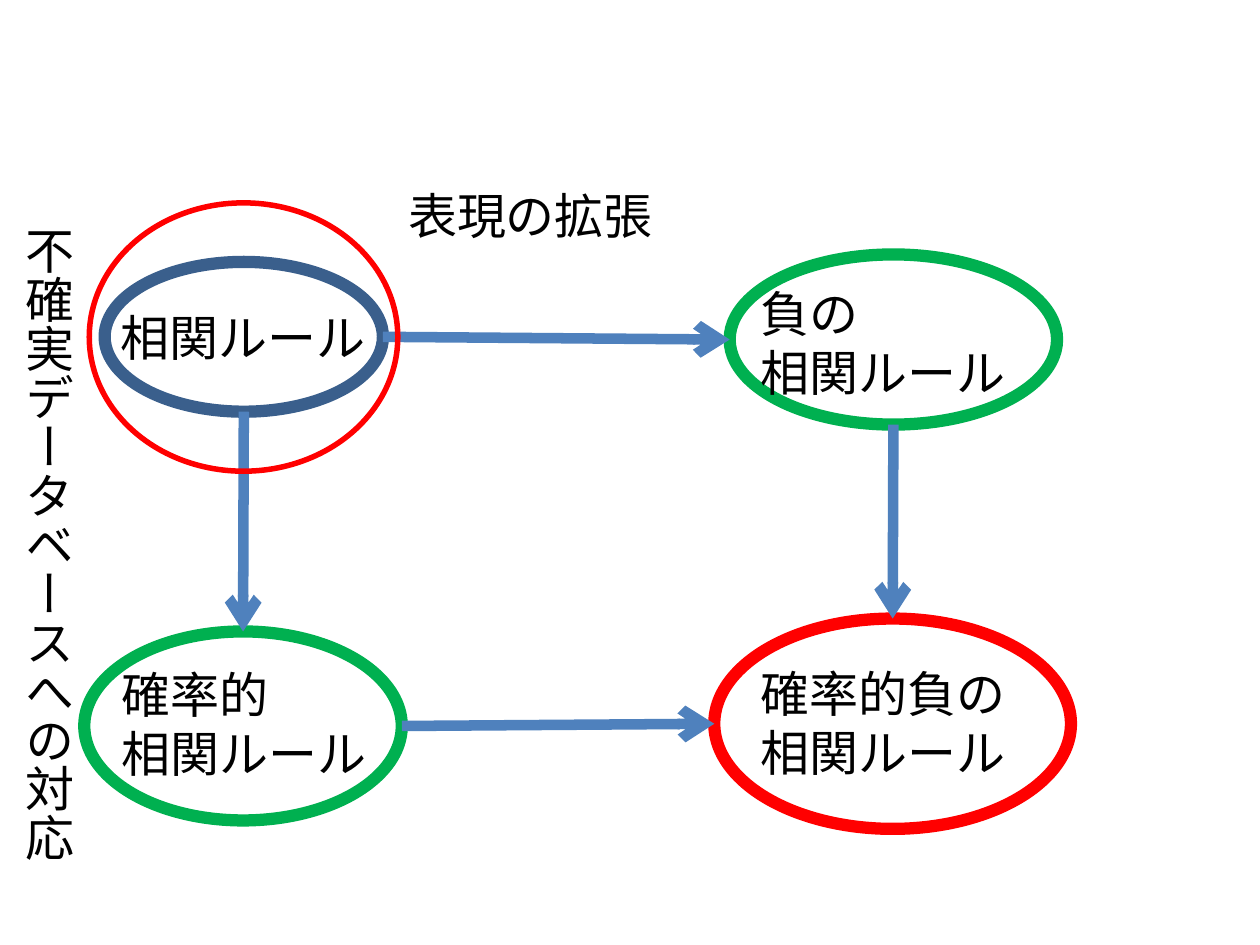
"""Build a slide that maps how correlation rules extend to negative and probabilistic ones."""
from lxml import etree
from pptx import Presentation
from pptx.dml.color import RGBColor
from pptx.enum import shapes, text
from pptx.oxml.ns import qn
from pptx.util import Cm, Pt

BLACK = RGBColor(0x00, 0x00, 0x00)
WHITE = RGBColor(0xFF, 0xFF, 0xFF)
NAVY = RGBColor(0x3A, 0x5F, 0x8C)
BLUE = RGBColor(0x4F, 0x81, 0xBD)
GREEN = RGBColor(0x00, 0xB0, 0x50)
RED = RGBColor(0xFF, 0x00, 0x00)
LEFT, CENTER = text.PP_ALIGN.LEFT, text.PP_ALIGN.CENTER

deck = Presentation()
deck.slide_width, deck.slide_height = Cm(25.4), Cm(19.05)
page = deck.slides.add_slide(deck.slide_layouts[6])


def add_ellipse(place, color, width):
    ellipse = page.shapes.add_shape(shapes.MSO_SHAPE.OVAL, *map(Cm, place))
    ellipse.shadow.inherit = False
    ellipse.line.color.rgb = color
    ellipse.line.width = Pt(width)
    return ellipse


def add_label(place, wording, align):
    box = page.shapes.add_textbox(*map(Cm, place))
    box.text_frame.word_wrap = True
    box.text_frame.text = wording
    for para in box.text_frame.paragraphs:
        para.alignment = align
        for span in para.runs:
            span.font.name = "Karla"
            span.font.size = Pt(28)
            span.font.color.rgb = BLACK
    return box


rules = {}
for name, place, color in [
    ("basic", (2.11, 5.28, 5.61, 3.02), NAVY),
    ("negative", (14.71, 5.13, 6.6, 3.43), GREEN),
    ("probabilistic", (1.7, 12.73, 6.4, 3.81), GREEN),
    ("combined", (14.4, 12.47, 7.19, 4.24), RED),
]:
    rules[name] = add_ellipse(place, color, 7)
    rules[name].fill.solid()
    rules[name].fill.fore_color.rgb = WHITE

for source, target, downward in [
    ("basic", "probabilistic", True),
    ("basic", "negative", False),
    ("negative", "combined", True),
    ("probabilistic", "combined", False),
]:
    start, end = rules[source], rules[target]
    if downward:
        points = (start.left + start.width // 2, start.top + start.height,
                  end.left + end.width // 2, end.top)
    else:
        points = (start.left + start.width, start.top + start.height // 2,
                  end.left, end.top + end.height // 2)
    arrow = page.shapes.add_connector(shapes.MSO_CONNECTOR.STRAIGHT, *points)
    arrow.line.color.rgb = BLUE
    arrow.line.width = Pt(6)
    etree.SubElement(arrow.line._get_or_add_ln(), qn("a:tailEnd"), type="arrow")
    etree.SubElement(arrow._element.spPr, qn("a:effectLst"))

side_label = add_label((0, 4.32, 1.7, 13.49), "不確実データベースへの対応", LEFT)
side_label.text_frame._txBody.bodyPr.set("vert", "eaVert")

for place, wording, align in [
    ((6.2, 3.61, 8.99, 1.45), "表現の拡張", CENTER),
    ((1.78, 6.07, 6.25, 1.45), "相関ルール", CENTER),
    ((15.09, 5.59, 5.99, 2.64), "負の\n相関ルール", LEFT),
    ((2.21, 13.28, 5.89, 2.64), "確率的\n相関ルール", LEFT),
    ((15.09, 13.26, 6.58, 2.64), "確率的負の\n相関ルール", LEFT),
]:
    add_label(place, wording, align)

focus_ring = add_ellipse((1.8, 4.09, 6.22, 5.41), RED, 3.15)
focus_ring.fill.background()

deck.save("out.pptx")
